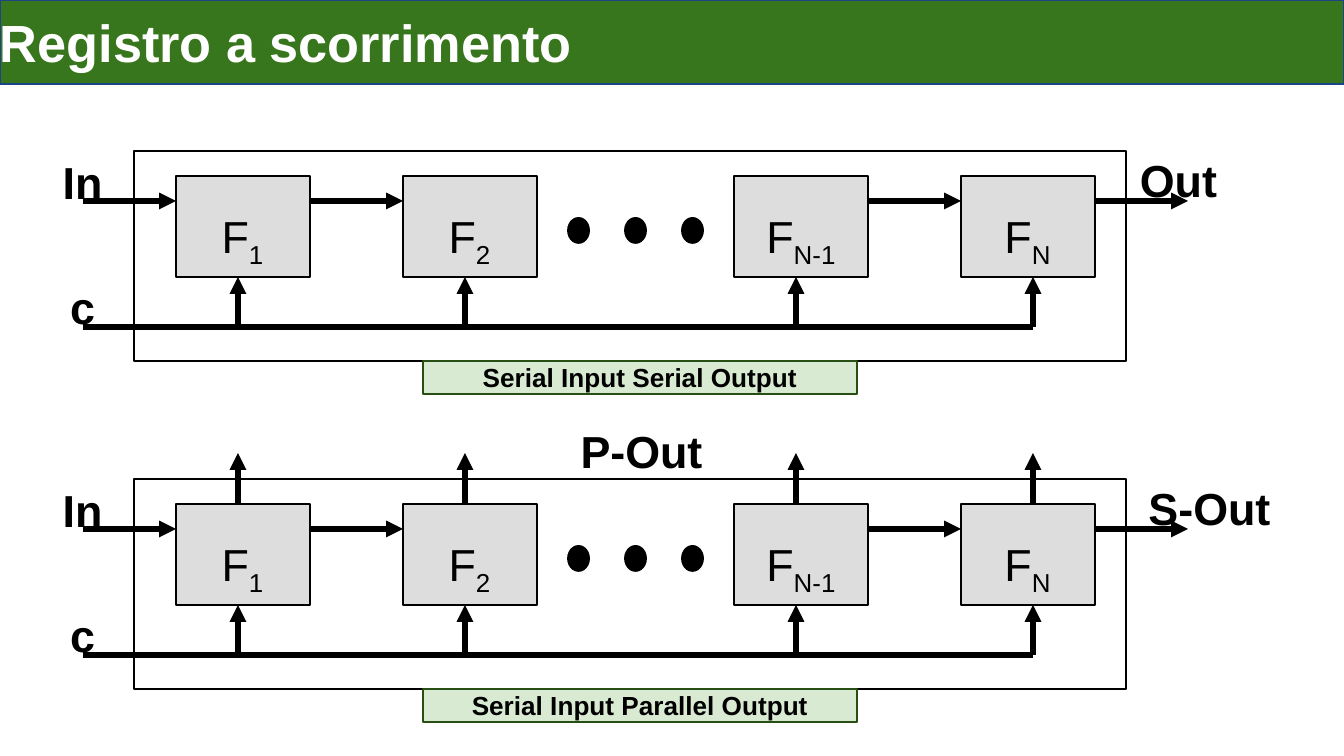
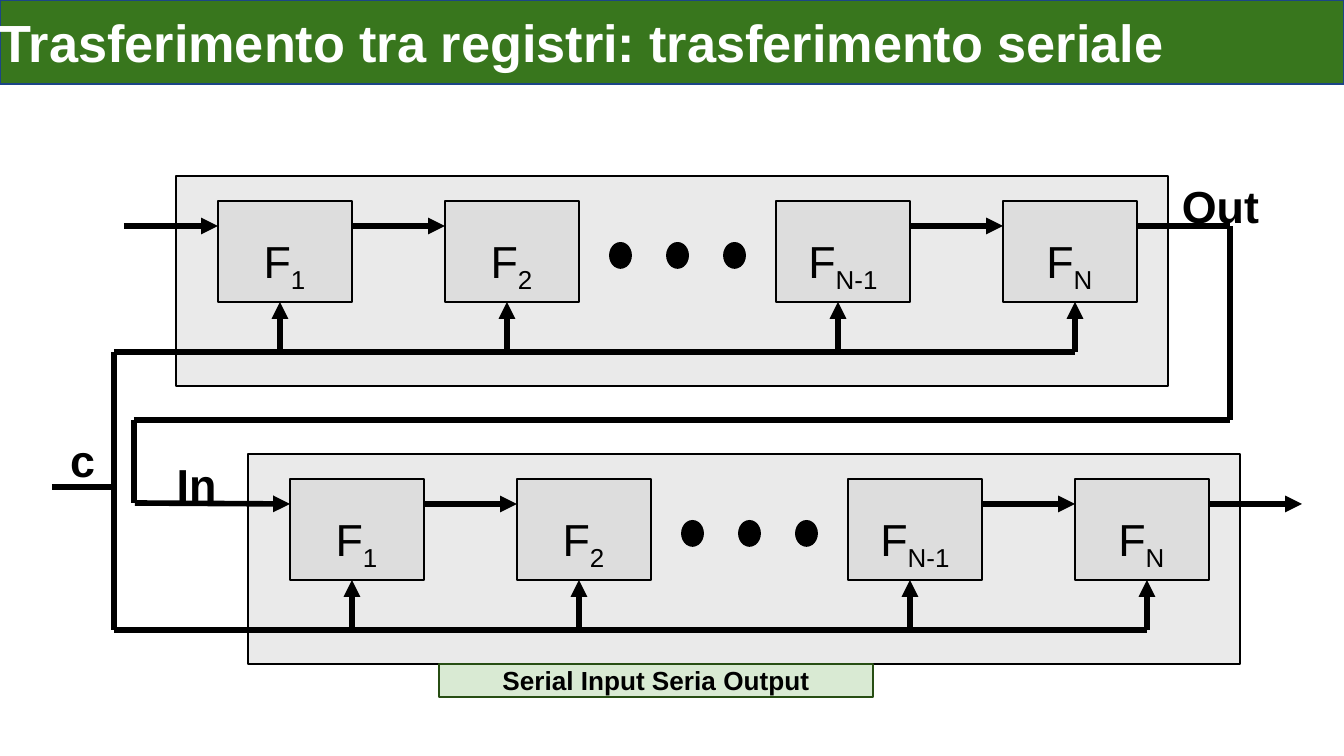
from lxml import etree
from pptx import Presentation
from pptx.dml.color import RGBColor
from pptx.enum.shapes import MSO_CONNECTOR, MSO_SHAPE
from pptx.enum.text import MSO_ANCHOR, PP_ALIGN
from pptx.oxml.ns import qn
from pptx.util import Emu, Pt

RECTANGLE, OVAL = MSO_SHAPE.RECTANGLE, MSO_SHAPE.OVAL
STRAIGHT = MSO_CONNECTOR.STRAIGHT
LEFT, CENTER = PP_ALIGN.LEFT, PP_ALIGN.CENTER
TOP, MIDDLE = MSO_ANCHOR.TOP, MSO_ANCHOR.MIDDLE

PX = 914400 / 134.4
BLACK, WHITE = "000000", "FFFFFF"
CELL_GRAY, FRAME_GRAY = "DDDDDD", "EAEAEA"
TITLE_GREEN, TITLE_EDGE = "38761D", "1C4587"
CAPTION_GREEN, CAPTION_EDGE = "D9EAD3", "274E13"

FRAME_WIDTH, FRAME_HEIGHT = 992, 210
CELL_WIDTH, CELL_HEIGHT, CELL_TOP = 134, 101, 25
WIRE_LENGTH, WIRE_Y, BUS_Y = 93, 50, 176
CELLS = [("1", 42, 62, 93), ("2", 269, 62, 93), ("N-1", 600, 62, 114), ("N", 827, 72, 93)]


def add_box(page, kind, bounds, fill=None, edge=None, weight=1, text="", subscript="",
            size=24, bold=True, color=BLACK, align=CENTER, anchor=MIDDLE, insets=(0, 0)):
    bounds = [Emu(round(length * PX)) for length in bounds]
    if kind is None:
        box = page.shapes.add_textbox(*bounds)
    else:
        box = page.shapes.add_shape(kind, *bounds)
        box.shadow.inherit = False
        box.line.color.rgb = RGBColor.from_string(edge)
        box.line.width = Pt(weight)
        if fill:
            box.fill.solid()
            box.fill.fore_color.rgb = RGBColor.from_string(fill)
        else:
            box.fill.background()
    if text:
        frame = box.text_frame
        frame.word_wrap = True
        frame.vertical_anchor = anchor
        frame.margin_left = frame.margin_right = Emu(round(insets[0] * PX))
        frame.margin_top = Emu(round(insets[1] * PX))
        frame.margin_bottom = 0
        para = frame.paragraphs[0]
        para.alignment = align
        para.font.name, para.font.size, para.font.bold = "Arial", Pt(size), bold
        para.font.color.rgb = RGBColor.from_string(color)
        para.add_run().text = text
        if subscript:
            span = para.add_run()
            span.text = subscript
            span.font._element.set("baseline", "-25000")


def add_wire(page, x1, y1, x2, y2, arrow=False):
    ends = [Emu(round(length * PX)) for length in (x1, y1, x2, y2)]
    wire = page.shapes.add_connector(STRAIGHT, *ends)
    wire.line.color.rgb = RGBColor.from_string(BLACK)
    wire.line.width = Pt(3)
    if arrow:
        etree.SubElement(wire.line._get_or_add_ln(), qn("a:tailEnd"), type="triangle")
    etree.SubElement(wire._element.spPr, qn("a:effectLst"))


PAGES = [
    {
        "title": "Registro a scorrimento",
        "registers": [
            {"at": (134, 151), "fill": None, "input": (83, 201), "bus": 83,
             "out_arrow": True, "parallel": False},
            {"at": (134, 479), "fill": None, "input": (83, 529), "bus": 83,
             "out_arrow": True, "parallel": True},
        ],
        "wires": [],
        "labels": [("In", 31, 144, 103), ("c", 31, 269, 103), ("Out", 1106, 142, 145),
                   ("In", 31, 472, 103), ("c", 31, 597, 103), ("S-Out", 1106, 470, 207),
                   ("P-Out", 538, 413, 207)],
        "captions": [("Serial Input Serial Output", 423, 361),
                     ("Serial Input Parallel Output", 423, 689)],
    },
    {
        "title": "Trasferimento tra registri: trasferimento seriale",
        "registers": [
            {"at": (176, 176), "fill": FRAME_GRAY, "input": (124, 226), "bus": 114,
             "out_arrow": False, "parallel": False},
            {"at": (248, 454), "fill": FRAME_GRAY, "input": (135, 503), "bus": 114,
             "out_arrow": True, "parallel": False},
        ],
        "wires": [(1230, 226, 1230, 420), (134, 420, 1230, 420), (134, 420, 134, 503),
                  (114, 352, 114, 630), (52, 487, 114, 487)],
        "labels": [("c", 31, 422, 103), ("Out", 1148, 168, 145), ("In", 145, 446, 103)],
        "captions": [("Serial Input Seria Output", 439, 664)],
    },
]

deck = Presentation()
deck.slide_width, deck.slide_height = Emu(round(1344 * PX)), Emu(round(756 * PX))

for content in PAGES:
    page = deck.slides.add_slide(deck.slide_layouts[6])

    for register in content["registers"]:
        left, top = register["at"]
        wire_y, bus_y = top + WIRE_Y, top + BUS_Y
        cell_top = top + CELL_TOP
        cell_bottom = cell_top + CELL_HEIGHT
        add_box(page, RECTANGLE, (left, top, FRAME_WIDTH, FRAME_HEIGHT), register["fill"], BLACK)

        for name, offset, tap, label_width in CELLS:
            cell_left = left + offset
            cell_right = cell_left + CELL_WIDTH
            tap_x = cell_left + tap
            label_left = cell_left + (CELL_WIDTH - label_width) // 2
            add_box(page, RECTANGLE, (cell_left, cell_top, CELL_WIDTH, CELL_HEIGHT),
                    CELL_GRAY, BLACK)
            add_box(page, None, (label_left, cell_top + 22, label_width, 64), text="F",
                    subscript=name, bold=False, anchor=TOP, insets=(12, 11))
            if name != "2":
                arrow = name != "N" or register["out_arrow"]
                add_wire(page, cell_right, wire_y, cell_right + WIRE_LENGTH, wire_y, arrow)
            add_wire(page, tap_x, bus_y, tap_x, cell_bottom, True)
            if register["parallel"]:
                add_wire(page, tap_x, cell_top, tap_x, top - 26, True)

        add_wire(page, *register["input"], left + CELLS[0][1], wire_y, True)
        add_wire(page, register["bus"], bus_y, tap_x, bus_y)
        for index in range(3):
            add_box(page, OVAL, (left + 434 + 57 * index, top + 67, 21, 25), BLACK, BLACK)

    for ends in content["wires"]:
        add_wire(page, *ends)
    for text, x, y, width in content["labels"]:
        add_box(page, None, (x, y, width, 58), text=text, anchor=TOP, insets=(12, 11))

    add_box(page, RECTANGLE, (0, 0, 1344, 84), TITLE_GREEN, TITLE_EDGE, 0.75,
            text=content["title"], size=28, color=WHITE, align=LEFT)
    for text, x, y in content["captions"]:
        add_box(page, RECTANGLE, (x, y, 434, 33), CAPTION_GREEN, CAPTION_EDGE, 0.75,
                text=text, size=14, insets=(13, 0))

deck.save("out.pptx")
